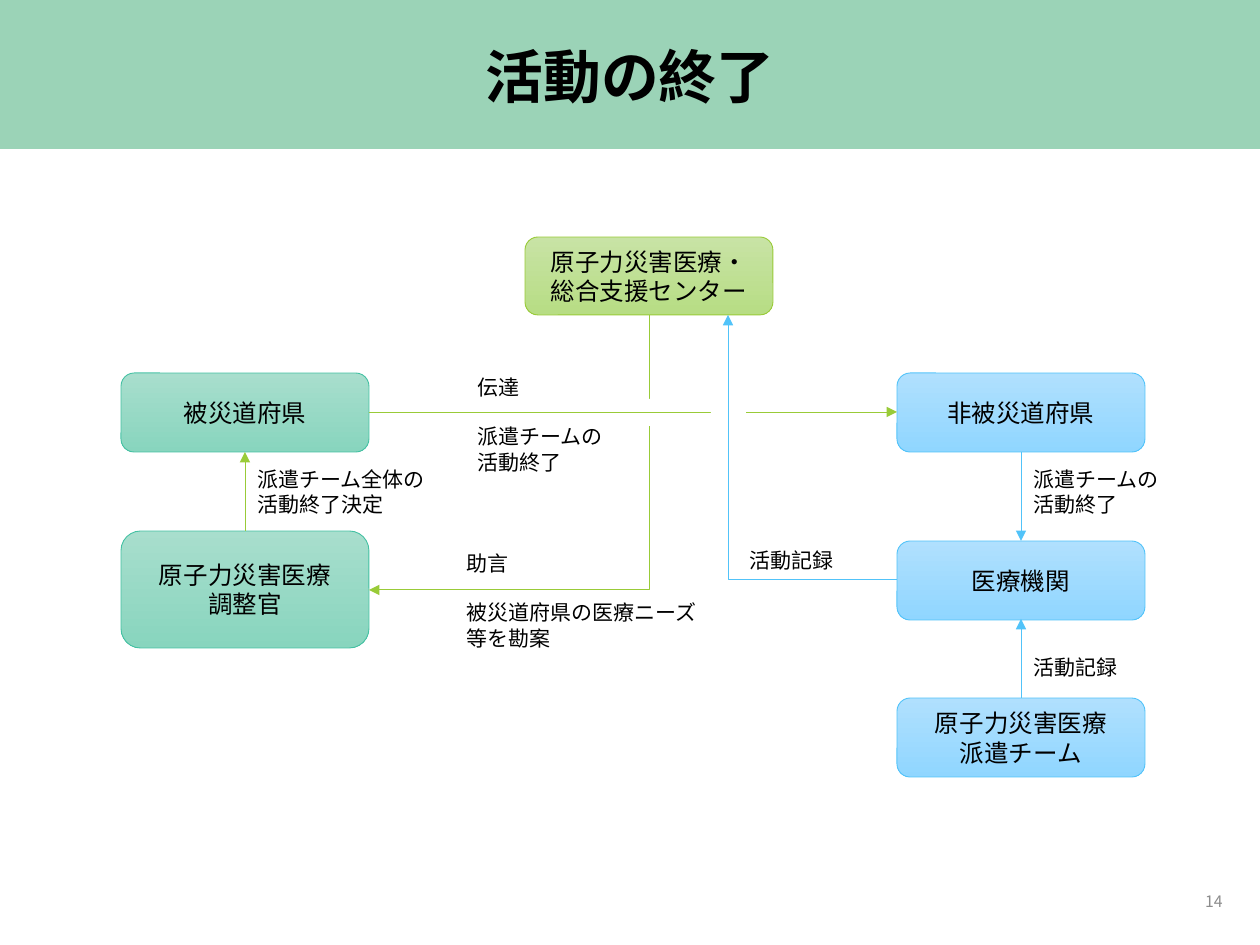
from lxml.etree import SubElement
from pptx import Presentation
from pptx.dml.color import RGBColor
from pptx.enum.shapes import MSO_CONNECTOR as Link, MSO_SHAPE as Shape
from pptx.enum.text import MSO_ANCHOR as Anchor, PP_ALIGN as Align
from pptx.oxml.ns import qn
from pptx.util import Emu, Pt

PX_PER_INCH = 126
FONT = "Noto Sans CJK JP"
GREEN, TEAL, BLUE = "99CB38", "44C1A3", "51C3F9"
GRADIENTS = {GREEN: ("C8E3A5", "B7DD84"), TEAL: ("A8DECD", "88D5BE"), BLUE: ("B0E0FE", "90D6FF")}
BOX_WIDTH = 248


def px(*lengths):
    """Turn pixel lengths into EMU."""
    return [Emu(round(length * 914400 / PX_PER_INCH)) for length in lengths]


def rgb(code):
    """Turn a hex string into a colour."""
    return RGBColor.from_string(code)


def write(shape, text, size=12, color="000000", bold=False, align=Align.LEFT,
          anchor=Anchor.TOP, leading=None, gap=0):
    """Fill a shape with one formatted paragraph per line of text."""
    frame = shape.text_frame
    frame.word_wrap = True
    frame.vertical_anchor = anchor
    frame.text = text
    for index, paragraph in enumerate(frame.paragraphs):
        paragraph.alignment = align
        paragraph.line_spacing = leading
        paragraph.space_before = Pt(gap if index else 0)
        run = paragraph.runs[0]
        run.font.name = FONT
        run.font.size = Pt(size)
        run.font.bold = bold
        run.font.color.rgb = rgb(color)
        SubElement(run.font._element, qn("a:ea"), typeface=FONT)


def add_block(slide, left, top, width, height, color):
    """Add a plain rectangle without an outline."""
    block = slide.shapes.add_shape(Shape.RECTANGLE, *px(left, top, width, height))
    block.shadow.inherit = False
    block.fill.solid()
    block.fill.fore_color.rgb = rgb(color)
    block.line.fill.background()
    return block


def add_organisation(slide, text, left, top, height, color):
    """Add a rounded gradient box for one organisation."""
    box = slide.shapes.add_shape(Shape.ROUNDED_RECTANGLE, *px(left, top, BOX_WIDTH, height))
    box.shadow.inherit = False
    box.fill.gradient()
    box.fill.gradient_angle = 270
    for stop, shade in zip(box.fill.gradient_stops, GRADIENTS[color]):
        stop.color.rgb = rgb(shade)
    box.line.color.rgb = rgb(color)
    box.line.width = Pt(0.5)
    write(box, text, size=14, align=Align.CENTER, anchor=Anchor.MIDDLE)


def add_label(slide, text, left, top, width, height, **style):
    """Add a free text label."""
    label = slide.shapes.add_textbox(*px(left, top, width, height))
    write(label, text, **style)


def add_arrow(slide, start, end, color, bent=False, arrow_end="tailEnd"):
    """Add a straight arrow, or one that runs sideways and then turns once."""
    kind = Link.ELBOW if bent else Link.STRAIGHT
    arrow = slide.shapes.add_connector(kind, *px(*start, *end))
    arrow.line.color.rgb = rgb(color)
    arrow.line.width = Pt(0.5)
    properties = arrow.element.spPr
    if bent:
        properties.find(qn("a:prstGeom")).set("prst", "bentConnector2")
    SubElement(properties.find(qn("a:ln")), qn(f"a:{arrow_end}"), type="triangle")
    SubElement(properties, qn("a:effectLst"))


def add_heading(slide, text):
    """Place the title on its coloured band."""
    title = slide.shapes.title
    title.left, title.top, title.width, title.height = px(87, 26, 1086, 107)
    write(title, text, size=33, bold=True, align=Align.CENTER, anchor=Anchor.MIDDLE, leading=0.9)
    band = add_block(slide, 0, 0, 1260, 149, "9BD3B7")
    title.element.addprevious(band.element)


def main():
    """Build the slide and save it."""
    deck = Presentation()
    deck.slide_width, deck.slide_height = px(1260, 945)
    slide = deck.slides.add_slide(deck.slide_layouts[5])
    add_heading(slide, "活動の終了")

    for organisation in (
        ("原子力災害医療・総合支援センター", 525, 237, 78, GREEN),
        ("原子力災害医療\n調整官", 121, 531, 117, TEAL),
        ("被災道府県", 121, 373, 79, TEAL),
        ("非被災道府県", 897, 373, 79, BLUE),
        ("医療機関", 897, 541, 79, BLUE),
        ("原子力災害医療\n派遣チーム", 897, 698, 79, BLUE),
    ):
        add_organisation(slide, *organisation)

    add_arrow(slide, (369, 590), (649, 315), GREEN, bent=True, arrow_end="headEnd")
    add_arrow(slide, (245, 531), (245, 452), GREEN)
    add_arrow(slide, (1021, 452), (1021, 541), BLUE)
    add_arrow(slide, (1021, 698), (1021, 619), BLUE)
    add_block(slide, 632, 399, 35, 27, "FFFFFF")
    add_arrow(slide, (369, 412), (897, 412), GREEN)
    add_block(slide, 711, 399, 35, 27, "FFFFFF")
    add_arrow(slide, (897, 580), (728, 315), BLUE, bent=True)

    for label in (
        ("派遣チーム全体の活動終了決定", 245, 460, 203, 63),
        ("派遣チームの活動終了", 1021, 460, 152, 63),
        ("活動記録", 1021, 648, 152, 38),
        ("活動記録", 737, 541, 152, 38),
    ):
        add_label(slide, *label)
    add_label(slide, "助言\n被災道府県の医療ニーズ等を勘案", 454, 544, 275, 115, gap=14)
    add_label(slide, "伝達\n派遣チームの活動終了", 465, 368, 158, 115, gap=14)
    add_label(slide, "14", 951, 876, 284, 50, size=9, color="8C8C8C",
              align=Align.RIGHT, anchor=Anchor.MIDDLE)
    deck.save("out.pptx")


if __name__ == "__main__":
    main()
